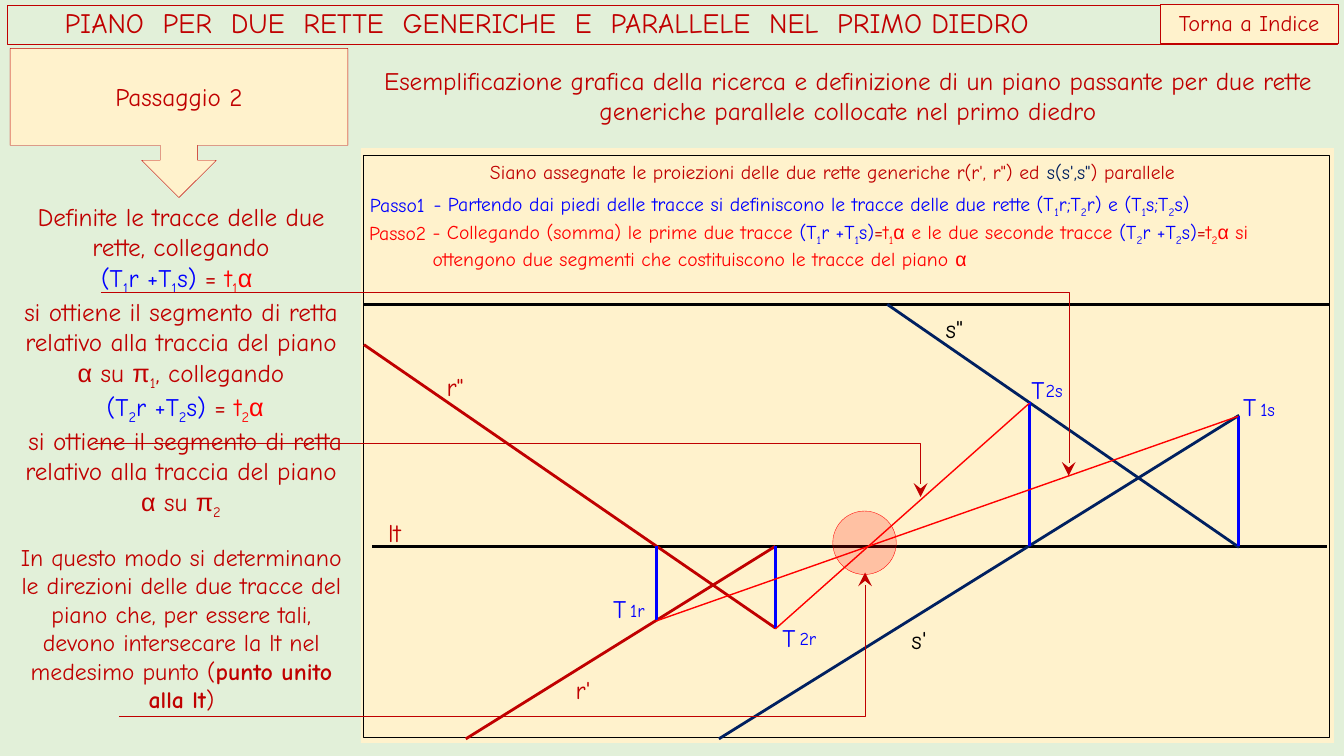
from itertools import groupby

from lxml.etree import SubElement
from pptx import Presentation
from pptx.dml.color import RGBColor
from pptx.enum.shapes import MSO_CONNECTOR, MSO_SHAPE
from pptx.enum.text import MSO_ANCHOR, MSO_AUTO_SIZE, PP_ALIGN
from pptx.oxml.ns import qn
from pptx.util import Pt

PX = 9144  # 100 px to the inch
COLORS = {
    "mint": "E2F0D9", "cream": "FFF2CC", "crimson": "C00000", "red": "FF0000",
    "blue": "0000FF", "navy": "002060", "black": "000000",
}
MAIN_FONT, GREEK_FONT = "Comic Neue", "Arial"
BOX = {"word_wrap": True, "vertical_anchor": MSO_ANCHOR.TOP,
       "auto_size": MSO_AUTO_SIZE.SHAPE_TO_FIT_TEXT}
MIDDLE = {"word_wrap": True, "vertical_anchor": MSO_ANCHOR.MIDDLE,
          "auto_size": MSO_AUTO_SIZE.NONE}
TIGHT = {**BOX, "margin_left": 0, "margin_right": 0, "margin_top": 0, "margin_bottom": 0}
LABEL = {**TIGHT, "word_wrap": False}


def rgb(color):
    return RGBColor.from_string(COLORS[color])


def px(*lengths):
    return [length * PX for length in lengths]


def apply(target, values):
    for name, value in values.items():
        setattr(target, name, value)


def pieces(text):
    """Split text into plain, Greek and subscript parts; "_" lowers the next character."""
    for index, part in enumerate(text.split("_")):
        if index:
            yield "sub", part[0]
            part = part[1:]
        for kind, chars in groupby(part, lambda c: "greek" if c in "απ" else "plain"):
            yield kind, "".join(chars)


def write(shape, paragraphs, size, frame_format, align=PP_ALIGN.CENTER):
    """Each paragraph is a list of (text, colour) or (text, colour, bold)."""
    frame = shape.text_frame
    apply(frame, frame_format)
    for index, spans in enumerate(paragraphs):
        paragraph = frame.add_paragraph() if index else frame.paragraphs[0]
        paragraph.alignment = align
        for text, color, *bold in spans:
            for kind, chunk in pieces(text):
                run = paragraph.add_run()
                run.text = chunk
                apply(run.font, {
                    "name": GREEK_FONT if kind == "greek" else MAIN_FONT,
                    "size": Pt(size), "bold": bool(bold)})
                run.font.color.rgb = rgb(color)
                if kind == "sub":
                    run.font._element.set("baseline", "-25000")


def outline(shape, color, width):
    shape.line.color.rgb = rgb(color)
    shape.line.width = Pt(width)


def panel(slide, kind, place, fill="cream", line=None, width=0.25):
    shape = slide.shapes.add_shape(kind, *px(*place))
    shape.shadow.inherit = False
    shape.fill.solid()
    shape.fill.fore_color.rgb = rgb(fill)
    if line:
        outline(shape, line, width)
    else:
        shape.line.fill.background()
    return shape


def label(slide, place, spans, size, frame_format=LABEL):
    write(panel(slide, MSO_SHAPE.RECTANGLE, place), [spans], size, frame_format, PP_ALIGN.LEFT)


def text_box(slide, place, paragraphs, size):
    write(slide.shapes.add_textbox(*px(*place)), paragraphs, size, BOX)


def segment(slide, ends, color, width=0, kind=MSO_CONNECTOR.STRAIGHT):
    connector = slide.shapes.add_connector(kind, *px(*ends))
    outline(connector, color, width)
    SubElement(connector._element.spPr, qn("a:effectLst"))
    return connector


def elbow_arrow(slide, ends):
    """Run horizontally to the far end, then turn towards the target."""
    properties = segment(slide, ends, "crimson", 0.25, MSO_CONNECTOR.ELBOW)._element.spPr
    bend = properties.find(qn("a:prstGeom")).find(qn("a:avLst"))
    SubElement(bend, qn("a:gd"), name="adj1", fmla="val 100050")
    SubElement(properties.find(qn("a:ln")), qn("a:tailEnd"), type="stealth", w="lg", len="lg")


def header(slide):
    title = slide.shapes.title
    apply(title, dict(zip(("left", "top", "width", "height"), px(7, 5, 1319, 39))))
    outline(title, "crimson", 0.25)
    write(title, [[("PIANO  PER  DUE  RETTE  GENERICHE  E  PARALLELE  NEL  PRIMO DIEDRO",
                    "crimson")]], 20, {**MIDDLE, "margin_left": 57 * PX}, PP_ALIGN.LEFT)
    title.text_frame.paragraphs[0].line_spacing = 0.9
    callout = panel(slide, MSO_SHAPE.DOWN_ARROW_CALLOUT, (10, 48, 335, 148), line="crimson")
    write(callout, [[("Passaggio 2", "crimson")]], 18, MIDDLE)
    index_button = panel(slide, MSO_SHAPE.RECTANGLE, (1151, 4, 176, 39), line="crimson")
    write(index_button, [[("Torna a Indice", "crimson")]], 16, BOX)
    text_box(slide, (361, 60, 960, 71), [[(
        "Esemplificazione grafica della ricerca e definizione di un piano passante per "
        "due rette generiche parallele collocate nel primo diedro", "crimson")]], 18)


def trace_sum(n):
    return [(f"(T_{n}r +T_{n}s) ", "blue"), ("= ", "crimson"), (f"t_{n}α", "red")]


def explanation(slide):
    text_box(slide, (10, 195, 339, 343), [
        [("Definite le tracce delle due rette, collegando", "crimson")],
        trace_sum(1) + [(" ", "red")],
        [("si ottiene il segmento di retta relativo alla traccia del piano α su π_1, collegando",
          "crimson")],
        [(" ", "crimson")] + trace_sum(2),
        [(" si ottiene il segmento di retta relativo alla traccia del piano α su π_2", "crimson")],
    ], 18)
    text_box(slide, (3, 533, 354, 182), [[
        ("In questo modo si determinano le direzioni delle due tracce del piano che, per "
         "essere tali, devono intersecare la lt nel medesimo punto (", "crimson"),
        ("punto unito alla lt", "crimson", True), (")", "crimson")]], 17)


def steps(slide):
    label(slide, (486, 159, 758, 24), [
        ("Siano assegnate le proiezioni delle due rette generiche r(r', r\") ed ", "crimson"),
        ("s(s',s\"", "navy"), (") parallele", "crimson")], 14)
    label(slide, (367, 191, 67, 24), [("Passo1", "blue")], 14, TIGHT)
    label(slide, (430, 190, 886, 24), [(
        "- Partendo dai piedi delle tracce si definiscono le tracce delle due rette "
        "(T_1r;T_2r) e (T_1s;T_2s)", "blue")], 14, TIGHT)
    label(slide, (366, 219, 62, 24), [("Passo2", "red")], 14)
    label(slide, (429, 218, 873, 47), [
        ("- Collegando (somma) le prime due tracce ", "red"),
        ("(T_1r +T_1s)", "blue"), ("=", "crimson"),
        ("t_1α e le due seconde tracce ", "red"),
        ("(T_2r +T_2s)", "blue"), ("=", "crimson"),
        ("t_2α si ottengono due segmenti che costituiscono le tracce del piano α", "red"),
    ], 14, TIGHT)


def construction(slide):
    # Names of lines and of trace points
    for place, name, color in [
        ((385, 513, 19, 30), "lt", "crimson"),
        ((443, 368, 23, 30), "r\"", "crimson"),
        ((571, 669, 22, 30), "r'", "crimson"),
        ((938, 311, 34, 28), "s\"", "black"),
        ((904, 619, 24, 28), "s'", "black"),
    ]:
        label(slide, place, [(name, color)], 18)
    for t_place, index_place, index in [
        ((776, 617, 28, 24), (793, 622, 20, 20), "2r"),
        ((1023, 371, 28, 28), (1037, 376, 24, 20), "2s"),
        ((1233, 388, 28, 24), (1250, 395, 20, 20), "1s"),
        ((608, 589, 28, 24), (625, 595, 17, 22), "1r"),
    ]:
        label(slide, t_place, [("T", "blue")], 18)
        label(slide, index_place, [(index, "blue")], 13)

    # Ground line, upper edge, projections and perpendiculars
    for ends, color in [
        ((369, 542, 1316, 542), "black"), ((1319, 302, 361, 302), "black"),
        ((361, 342, 769, 623), "crimson"), ((462, 733, 769, 542), "crimson"),
        ((880, 302, 1229, 543), "navy"), ((713, 733, 1229, 412), "navy"),
        ((1021, 542, 1021, 399), "blue"), ((769, 542, 769, 623), "blue"),
        ((651, 542, 651, 615), "blue"), ((1228, 542, 1228, 413), "blue"),
    ]:
        segment(slide, ends, color)


def plane_traces(slide):
    elbow_arrow(slide, (118, 711, 858, 568))
    common_point = panel(slide, MSO_SHAPE.OVAL, (826, 507, 63, 63), "red", "red")
    tint = common_point._element.spPr.find(qn("a:solidFill"))[0]
    SubElement(tint, qn("a:alpha"), val="20000")
    for ends in [(769, 624, 1021, 400), (651, 616, 1228, 413)]:
        segment(slide, ends, "red", 1)
    for ends in [(100, 290, 1060, 472), (94, 440, 913, 493)]:
        elbow_arrow(slide, ends)


def main():
    deck = Presentation()
    deck.slide_width, deck.slide_height = px(1333, 750)
    slide = deck.slides.add_slide(deck.slide_layouts[5])
    slide.background.fill.solid()
    slide.background.fill.fore_color.rgb = rgb("mint")
    header(slide)
    explanation(slide)
    # Drawing sheet
    panel(slide, MSO_SHAPE.RECTANGLE, (358, 147, 965, 590))
    panel(slide, MSO_SHAPE.RECTANGLE, (361, 154, 958, 578), line="black", width=0)
    steps(slide)
    construction(slide)
    plane_traces(slide)
    deck.save("out.pptx")


if __name__ == "__main__":
    main()
